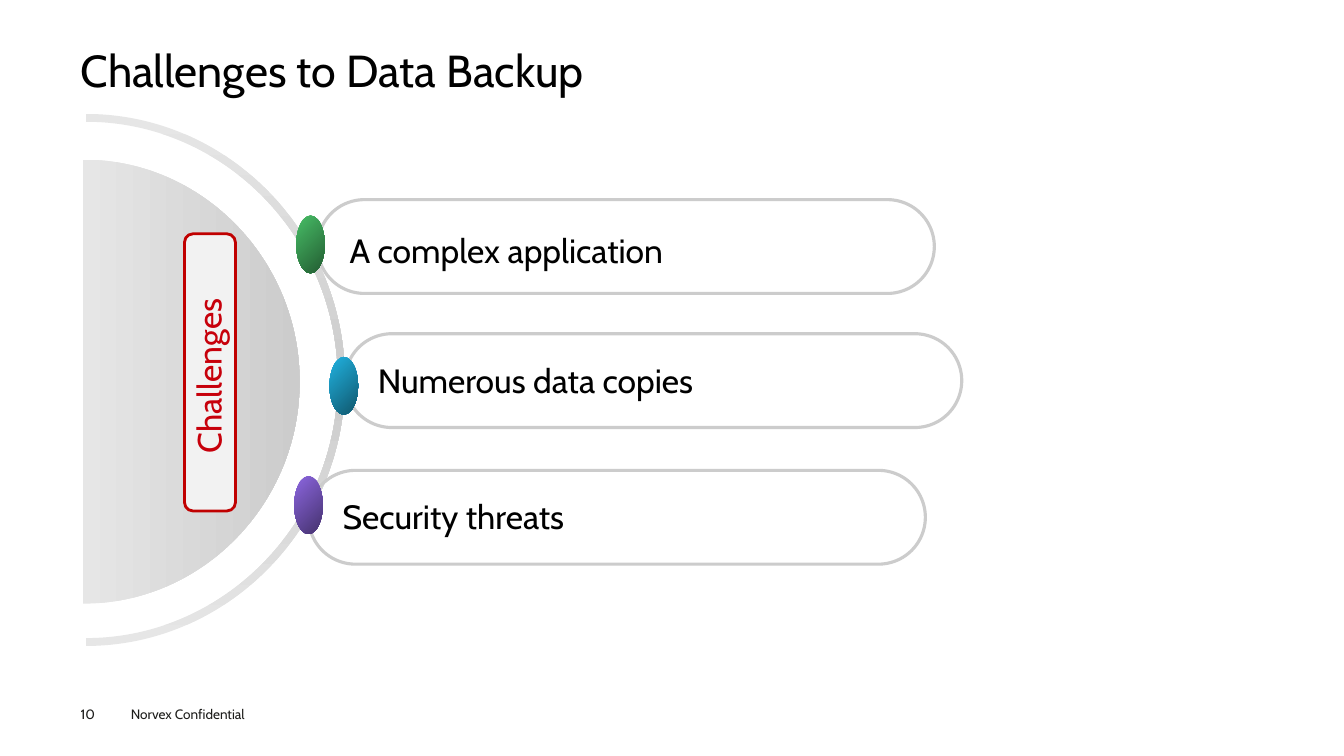
from copy import deepcopy

from pptx import Presentation
from pptx.dml.color import RGBColor
from pptx.enum.shapes import MSO_SHAPE as Kind
from pptx.enum.text import MSO_ANCHOR as Anchor
from pptx.oxml.ns import qn
from pptx.util import Pt

FONT = "Cabin"
BLACK = RGBColor(0x00, 0x00, 0x00)
INK = RGBColor(0x1D, 0x1D, 0x1B)
RED = RGBColor(0xC7, 0x00, 0x0B)
EDGE = RGBColor(0xC0, 0x00, 0x00)
PALE = RGBColor(0xF2, 0xF2, 0xF2)
LIGHT = RGBColor(0xE6, 0xE6, 0xE6)
GREY = RGBColor(0xCC, 0xCC, 0xCC)
GREEN = RGBColor(0x48, 0xBE, 0x67), RGBColor(0x23, 0x5C, 0x32)
BLUE = RGBColor(0x21, 0xB3, 0xE1), RGBColor(0x10, 0x57, 0x6D)
PURPLE = RGBColor(0x8D, 0x67, 0xE1), RGBColor(0x45, 0x32, 0x6D)

PILL_W, PILL_H = 440.6, 67
DOT_W, DOT_H = 20.4, 41.2
BEND = 0.55  # control arm of a quarter ellipse, as a share of its radius

# left and top of each pill
PILLS = [(226.8, 142.6), (246.4, 238.4), (220.4, 336)]
# left, top and colours of each dot
DOTS = [(211.6, 154, GREEN), (235.4, 255, BLUE), (210.2, 340.2, PURPLE)]
# words, left, top, width and wrap of each label
LABELS = [
    ("A complex application", 242.6, 160.6, 259.2, False),
    ("Numerous data copies", 262.8, 253.4, 262, False),
    ("Security threats", 237.6, 350.6, 449.2, True),
]


def text(slide, words, left, top, width, height, size=24, color=BLACK,
         pad=True, turn=0, wrap=True, anchor=Anchor.TOP, space=1.0):
    box = slide.shapes.add_textbox(Pt(left), Pt(top), Pt(width), Pt(height))
    box.rotation = turn
    frame = box.text_frame
    frame.word_wrap = wrap
    frame.vertical_anchor = anchor
    if not pad:
        frame.margin_left = frame.margin_right = 0
        frame.margin_top = frame.margin_bottom = 0
    para = frame.paragraphs[0]
    para.line_spacing = space
    run = para.add_run()
    run.text = words
    run.font.name = FONT
    run.font.size = Pt(size)
    run.font.color.rgb = color


def shape(slide, kind, left, top, width, height):
    item = slide.shapes.add_shape(kind, Pt(left), Pt(top), Pt(width), Pt(height))
    item.shadow.inherit = False
    return item


def outline(item, color, width):
    item.line.color.rgb = color
    item.line.width = Pt(width)


def blend(item, colors, angle):
    """Fill with evenly spaced gradient stops and no outline."""
    item.line.fill.background()
    item.fill.gradient()
    item.fill.gradient_angle = angle
    stops = item._element.spPr.gradFill.gsLst
    for _ in colors[2:]:
        stops.append(deepcopy(stops[-1]))
    for i, (stop, color) in enumerate(zip(item.fill.gradient_stops, colors)):
        stop.position = i / (len(colors) - 1)
        stop.color.rgb = color


def arc(x, y, wide, high):
    """Seven Bezier points of a right half ellipse, from top to bottom."""
    near, tall = BEND * wide, BEND * high
    return [(x, y - high), (x + near, y - high), (x + wide, y - tall),
            (x + wide, y), (x + wide, y + tall), (x + near, y + high),
            (x, y + high)]


def curve(slide, *arcs):
    """Draw a closed outline from arcs of seven points, joined by lines."""
    points = [(Pt(x), Pt(y)) for part in arcs for x, y in part]
    pen = slide.shapes.build_freeform(*points[0])
    pen.add_line_segments(points[1:], close=True)
    item = pen.convert_to_shape()
    item.shadow.inherit = False
    track = next(item._element.iter(qn("a:path")))
    nodes = list(track)
    for first in range(0, len(points), 7):
        for i in (first + 1, first + 4):
            nodes[i].tag = qn("a:cubicBezTo")
            for node in nodes[i + 1:i + 3]:
                nodes[i].append(node[0])
                track.remove(node)
    return item


def pill(slide, left, top):
    item = shape(slide, Kind.ROUNDED_RECTANGLE, left, top, PILL_W, PILL_H)
    item.adjustments[0] = 0.5
    item.fill.background()
    outline(item, GREY, 2.25)


def dot(slide, left, top, colors):
    blend(shape(slide, Kind.OVAL, left, top, DOT_W, DOT_H), colors, 315)


def dial(slide):
    outer = arc(61.4, 271.4, 185, 190)
    inner = arc(61.4, 271.4, 180, 184.4)
    blend(curve(slide, outer, inner[::-1]), (LIGHT, GREY, LIGHT), 90)
    blend(curve(slide, arc(59.2, 272.6, 154.8, 158.6)), (LIGHT, GREY), 0)


def badge(slide):
    item = shape(slide, Kind.ROUNDED_RECTANGLE, 131.8, 167, 36.4, 198)
    item.fill.solid()
    item.fill.fore_color.rgb = PALE
    outline(item, EDGE, 2)
    text(slide, "Challenges", 81.4, 245.5, 134.6, 36, color=RED, turn=270)


def main():
    deck = Presentation()
    deck.slide_width, deck.slide_height = Pt(960), Pt(540)
    slide = deck.slides.add_slide(deck.slide_layouts[6])

    text(slide, "Norvex Confidential", 86.4, 500.4, 115.2, 19.4,
         size=9.7, color=INK)
    text(slide, "10", 57.6, 504, 39.6, 11.6, size=9.7, color=INK, pad=False)
    text(slide, "Challenges to Data Backup", 57.6, 33, 844.6, 39, size=32,
         pad=False, anchor=Anchor.MIDDLE, space=0.9)

    for place in PILLS[:2]:
        pill(slide, *place)
    dial(slide)
    pill(slide, *PILLS[2])
    for place in DOTS:
        dot(slide, *place)
    badge(slide)
    for words, left, top, width, wrap in LABELS:
        text(slide, words, left, top, width, 36, wrap=wrap)
    deck.save("out.pptx")


if __name__ == "__main__":
    main()
